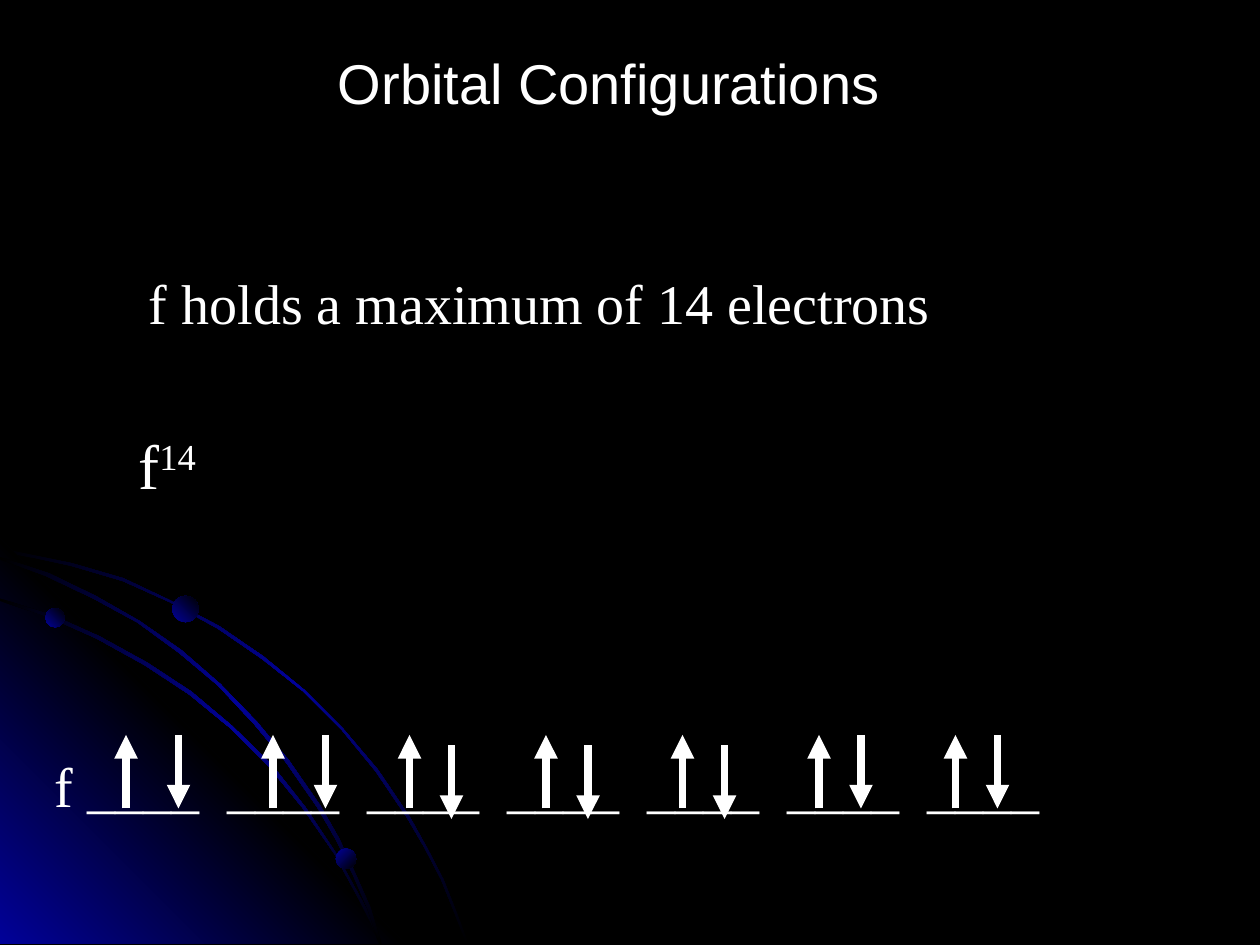
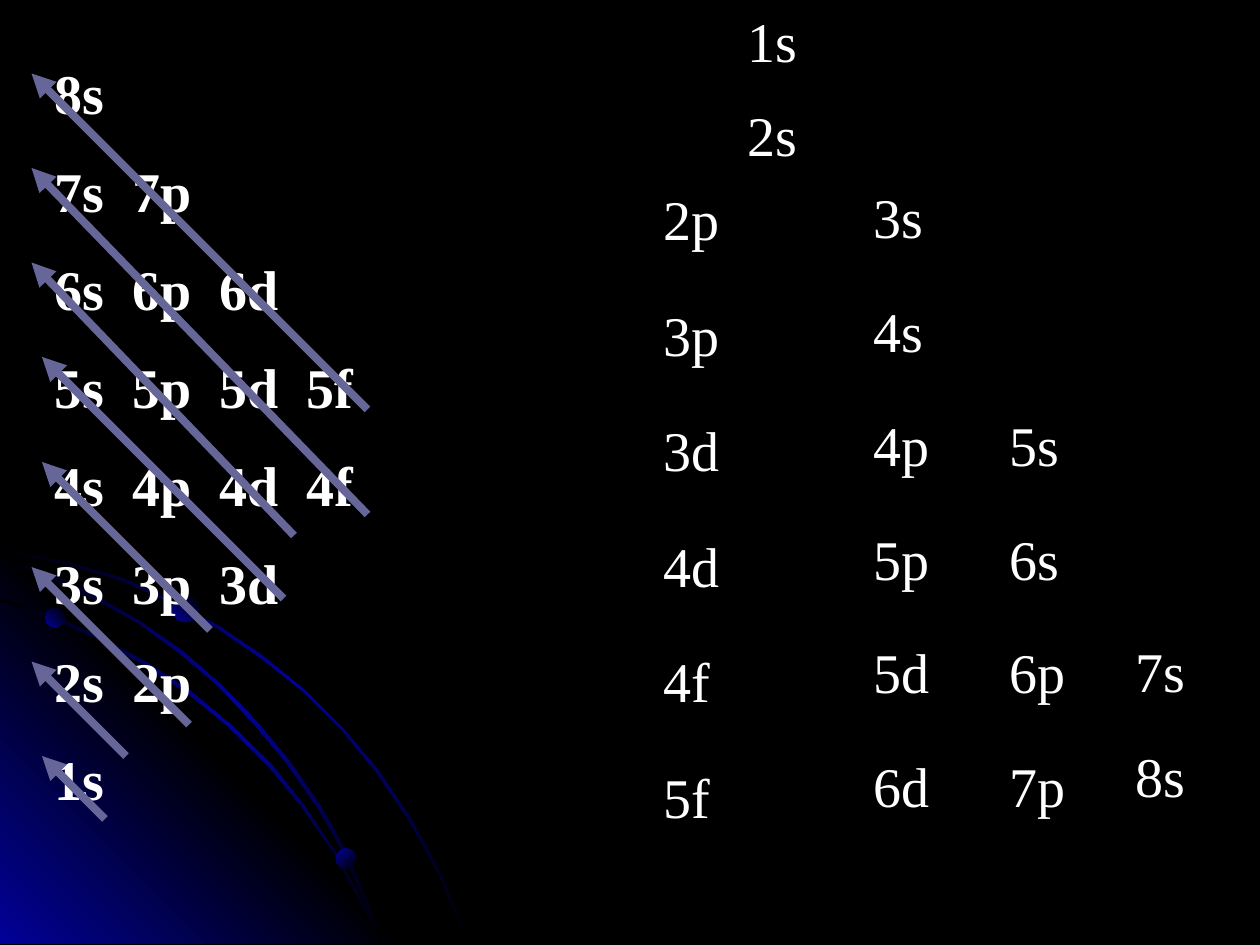
from dataclasses import dataclass
from lxml.etree import SubElement as Sub
from pptx import Presentation
from pptx.dml.color import RGBColor as RGB
from pptx.enum.shapes import MSO_CONNECTOR as Link, MSO_SHAPE as Kind
from pptx.enum.text import MSO_AUTO_SIZE as Fit
from pptx.oxml.ns import qn
from pptx.util import Pt

# ---- Content: slide 1 ----
TITLE = "Orbital Configurations"
FACT = "f holds a maximum of 14 electrons"
SHELL, COUNT = "f", "14"
BLANKS = ["____"] * 7
# Per orbital: x of the up arrow, x of the down arrow, drop of the down arrow
SPINS = [(72, 102, 0), (156, 186, 0), (234, 258, 6), (312, 336, 6),
         (390, 414, 6), (468, 492, 0), (546, 570, 0)]

# ---- Content: slide 2 ----
LEVELS = ["8s", "7s 7p", "6s 6p 6d", "5s 5p 5d 5f",
          "4s 4p 4d 4f", "3s 3p 3d", "2s 2p", "1s"]
# Diagonals: start x, start y, end x, end y
FILLING = [(60, 468, 24, 432), (72, 432, 18, 378), (108, 414, 18, 324),
           (120, 360, 24, 264), (162, 342, 24, 204), (168, 306, 18, 150),
           (210, 294, 18, 96), (210, 234, 18, 42)]
# Columns: left, top, step, labels
ORDER = [(420, 0, 54, ["1s", "2s"]),
         (372, 102, 66, ["2p", "3p", "3d", "4d", "4f", "5f"]),
         (492, 101, 65, ["3s", "4s", "4p", "5p", "5d", "6d"]),
         (570, 231, 65, ["5s", "6s", "6p", "7p"]),
         (642, 360, 60, ["7s", "8s"])]

# ---- Content: backdrop ----
UNIT = Pt(0.72)  # grid of the outlines below
OUTER = [(57, 447), (28, 441), (0, 435), (0, 438), (28, 443), (56, 449),
         (97, 461), (135, 478), (173, 499), (208, 523), (241, 549),
         (271, 579), (298, 612), (323, 649), (337, 673), (350, 698),
         (360, 723), (370, 749), (372, 749), (362, 723), (352, 698),
         (339, 673), (325, 648), (300, 611), (272, 578), (242, 548),
         (209, 521), (174, 497), (136, 477), (98, 459)]
GLOW = [(322, 749), (0, 749), (0, 427)]
INNER = [(285, 714), (294, 732), (301, 749), (303, 749), (296, 730),
         (286, 712), (266, 676), (242, 640), (215, 606), (184, 576),
         (152, 549), (117, 526), (79, 505), (41, 488), (0, 475), (0, 477),
         (39, 490), (77, 507), (115, 528), (150, 551), (183, 578),
         (213, 608), (240, 641), (265, 677)]
MIDDLE = [(0, 442), (0, 444), (36, 457), (74, 475), (109, 494), (142, 518),
          (173, 544), (202, 575), (227, 605), (252, 641), (267, 667),
          (280, 694), (292, 722), (301, 749), (303, 749), (294, 720),
          (282, 693), (269, 665), (254, 639), (229, 603), (204, 573),
          (175, 543), (144, 516), (111, 493), (76, 473), (39, 455)]
# Electrons: left, top, size, gradient angle
DOTS = [(26, 347.5, 11, 315), (192, 485, 11.5, 45), (98.5, 340.5, 15, 315)]


@dataclass(frozen=True)
class Theme:
    black: str = "000000"
    blue: str = "010199"
    white: str = "FFFFFF"
    mauve: str = "666699"
    serif: str = "Times New Roman"
    sans: str = "Arial"
    size: float = 32
    large: float = 36
    stroke: float = 4.5
    gap: float = 17.6


T = Theme()


# ---- Helpers ----
def blend(shape, hues, angle):
    """Fill with evenly spaced gradient stops."""
    shape.shadow.inherit = False
    shape.line.fill.background()
    shape.fill.gradient()
    grad = shape.element.spPr.find(qn("a:gradFill"))
    for child in list(grad):
        grad.remove(child)
    stops = Sub(grad, qn("a:gsLst"))
    for i, hue in enumerate(hues):
        stop = Sub(stops, qn("a:gs"), pos=str(100000 * i // (len(hues) - 1)))
        Sub(stop, qn("a:srgbClr"), val=hue)
    Sub(grad, qn("a:lin"), ang=str(angle * 60000), scaled="1")


def arrow(slide, x1, y1, x2, y2, hue):
    link = slide.shapes.add_connector(
        Link.STRAIGHT, Pt(x1), Pt(y1), Pt(x2), Pt(y2))
    link.line.color.rgb = RGB.from_string(hue)
    link.line.width = Pt(T.stroke)
    Sub(link.line._get_or_add_ln(), qn("a:tailEnd"), type="triangle")
    Sub(link.element.spPr, qn("a:effectLst"))


def write(slide, left, top, wide, high, lines, face=T.serif, size=T.size,
          bold=False, wrap=True, tabs=()):
    """Add a text box with one paragraph per line; return its frame."""
    frame = slide.shapes.add_textbox(
        Pt(left), Pt(top), Pt(wide), Pt(high)).text_frame
    frame.word_wrap = wrap
    frame.auto_size = Fit.SHAPE_TO_FIT_TEXT
    for i, line in enumerate(lines):
        para = frame.add_paragraph() if i else frame.paragraphs[0]
        para.text = line
        if tabs:
            stops = Sub(para._p.get_or_add_pPr(), qn("a:tabLst"))
            for tab in tabs:
                Sub(stops, qn("a:tab"), pos=str(Pt(tab)), algn="l")
        if i:
            para.space_before = Pt(T.gap)
        font = para.font
        font.name, font.size, font.bold = face, Pt(size), bold
        font.color.rgb = RGB.from_string(T.white)
    return frame


def backdrop(slide, layout):
    """Draw the glowing orbits and move them to the shared layout."""
    arc = (T.black, T.blue, T.black)
    for outline, hues, angle in [(OUTER, arc, 45),
                                 (GLOW, (T.blue, T.black, T.blue), 315),
                                 (INNER, arc, 45), (MIDDLE, arc, 45)]:
        pen = slide.shapes.build_freeform(*outline[0], scale=UNIT)
        pen.add_line_segments(outline[1:], close=True)
        blend(pen.convert_to_shape(), hues, angle)
    for left, top, size, angle in DOTS:
        dot = slide.shapes.add_shape(
            Kind.OVAL, Pt(left), Pt(top), Pt(size), Pt(size))
        blend(dot, (T.blue, T.black), angle)
    for shape in list(slide.shapes):
        layout.shapes.element.append(shape.element)


# ---- Slides ----
def orbitals(slide):
    tabs = [18.7 + 80 * i for i in range(len(BLANKS))]
    write(slide, 24, 426, 636, 45.5, ["\t".join([SHELL, *BLANKS])], tabs=tabs)
    write(slide, 78, 150, 552, 45.5, [FACT])
    for up, down, drop in SPINS:
        arrow(slide, up, 462, up, 420, T.white)
        arrow(slide, down, 420 + drop, down, 462 + drop, T.white)
    frame = write(slide, 72, 240, 444, 50.5, [SHELL], size=T.large)
    power = frame.paragraphs[0].add_run()
    power.text = COUNT
    power._r.get_or_add_rPr().set("baseline", "30000")
    write(slide, 186, 24, 327, 46, [TITLE], face=T.sans, wrap=False)


def order(slide):
    rows = [level.replace(" ", "\t") for level in LEVELS]
    write(slide, 24, 30, 192, 492.5, rows, bold=True, tabs=(44.5, 94.2, 144))
    for ends in FILLING:
        arrow(slide, *ends, T.mauve)
    for left, top, step, labels in ORDER:
        for i, label in enumerate(labels):
            write(slide, left, top + i * step, 56, 45.5, [label])


def main():
    deck = Presentation()
    deck.slide_width, deck.slide_height = Pt(720), Pt(540)
    ground = deck.slide_master.background.fill
    ground.solid()
    ground.fore_color.rgb = RGB.from_string(T.black)
    blank = deck.slide_layouts[6]
    first, second = [deck.slides.add_slide(blank) for _ in range(2)]
    backdrop(first, blank)
    orbitals(first)
    order(second)
    deck.save("out.pptx")


if __name__ == "__main__":
    main()
